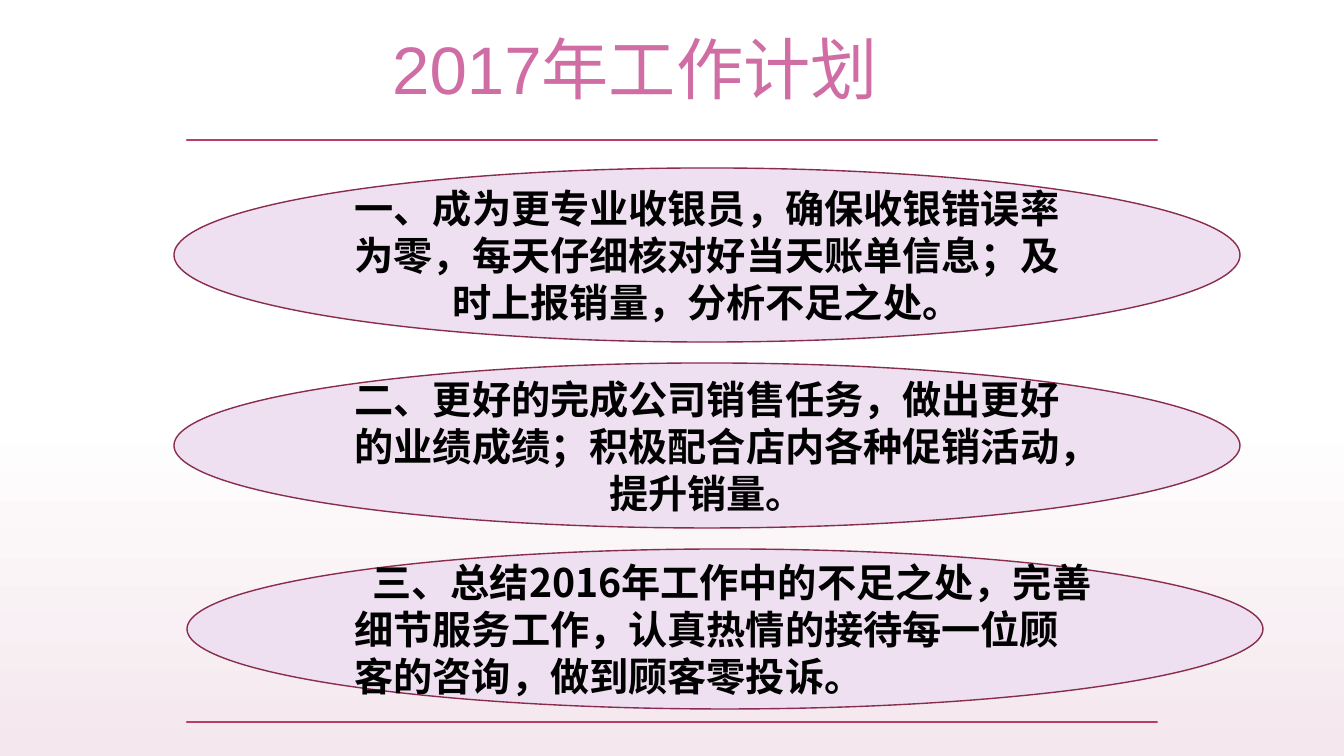
from pptx import Presentation
from pptx.dml.color import RGBColor
from pptx.enum.shapes import MSO_SHAPE as SHAPE
from pptx.enum.text import MSO_ANCHOR as ANCHOR, PP_ALIGN as ALIGN
from pptx.oxml.ns import qn
from pptx.util import Pt
from lxml.etree import SubElement

TITLE = "2017年工作计划"
TITLE_BOX = (30, 31, 1210, 73)
PLANS = [
    ("一、成为更专业收银员，确保收银错误率为零，每天仔细核对好当天账单信息；及时上报销量，分析不足之处。",
     (174, 168, 1066, 174), ALIGN.CENTER, 0),
    ("二、更好的完成公司销售任务，做出更好的业绩成绩；积极配合店内各种促销活动，提升销量。",
     (174, 363, 1066, 165), ALIGN.CENTER, 0),
    ("三、总结2016年工作中的不足之处，完善细节服务工作，认真热情的接待每一位顾客的咨询，做到顾客零投诉。",
     (187, 549, 1076, 160), ALIGN.LEFT, 18),
]
RULE_LEFT, RULE_RIGHT = 187, 1157
RULE_TOPS = (722, 140)
COLORS = {"title": "CF6DA4", "text": "000000", "oval": "EEE0F1", "edge": "882D4D",
          "rule": "B83D68", "paper": "FFFFFF", "blush": "F4E7ED"}
TITLE_FONT, BODY_FONT = "Arial", "Noto Sans CJK SC"
SCALE = 914400 / 100.8


def px(length):
    """Turn px into EMU."""
    return round(length * SCALE)


def color(name):
    """Return a named colour."""
    return RGBColor.from_string(COLORS[name])


def write(shape, text, *, size, font, fill, bold=False, align=ALIGN.CENTER, indent=0, spacing=None):
    """Write one formatted paragraph into a shape."""
    frame = shape.text_frame
    frame.word_wrap = True
    frame.vertical_anchor = ANCHOR.MIDDLE
    paragraph = frame.paragraphs[0]
    paragraph.alignment = align
    if spacing:
        paragraph.line_spacing = Pt(spacing)
    if indent:
        properties = paragraph._p.get_or_add_pPr()
        properties.set("marL", "0")
        properties.set("indent", str(px(indent)))
    run = paragraph.add_run()
    run.text = text
    run.font.size = Pt(size)
    run.font.bold = bold
    run.font.name = font
    run.font.color.rgb = color(fill)
    SubElement(run._r.get_or_add_rPr(), qn("a:ea")).set("typeface", BODY_FONT)


def set_line(shape, name, width):
    """Outline a shape without a shadow."""
    shape.shadow.inherit = False
    shape.line.color.rgb = color(name)
    shape.line.width = Pt(width)


def add_rules(slide):
    """Draw both horizontal rules as one outline."""
    builder = slide.shapes.build_freeform(RULE_LEFT, RULE_TOPS[0], scale=SCALE)
    for top in RULE_TOPS:
        if top != RULE_TOPS[0]:
            builder.move_to(RULE_LEFT, top)
        builder.add_line_segments([(RULE_RIGHT, top), (RULE_LEFT, top)], close=True)
    rules = builder.convert_to_shape()
    rules.fill.background()
    set_line(rules, "rule", 1.75)


def add_oval(slide, box):
    """Draw one plan oval."""
    oval = slide.shapes.add_shape(SHAPE.OVAL, *map(px, box))
    oval.fill.solid()
    oval.fill.fore_color.rgb = color("oval")
    set_line(oval, "edge", 1)
    return oval


def paint_background(slide):
    """Fade the background from white to blush."""
    fill = slide.background.fill
    fill.gradient()
    fill.gradient_angle = 270
    for stop, (name, position) in zip(fill.gradient_stops, (("paper", 0.55), ("blush", 1))):
        stop.color.rgb = color(name)
        stop.position = position


def main():
    """Build the work plan slide."""
    presentation = Presentation()
    presentation.slide_width, presentation.slide_height = px(1344), px(756)
    slide = presentation.slides.add_slide(presentation.slide_layouts[6])
    paint_background(slide)
    add_rules(slide)
    title = slide.shapes.add_textbox(*map(px, TITLE_BOX))
    write(title, TITLE, size=48, font=TITLE_FONT, fill="title")
    for text, box, align, indent in PLANS:
        write(add_oval(slide, box), text, size=28, font=BODY_FONT, fill="text", bold=True,
              align=align, indent=indent, spacing=33.6)
    presentation.save("out.pptx")


if __name__ == "__main__":
    main()
